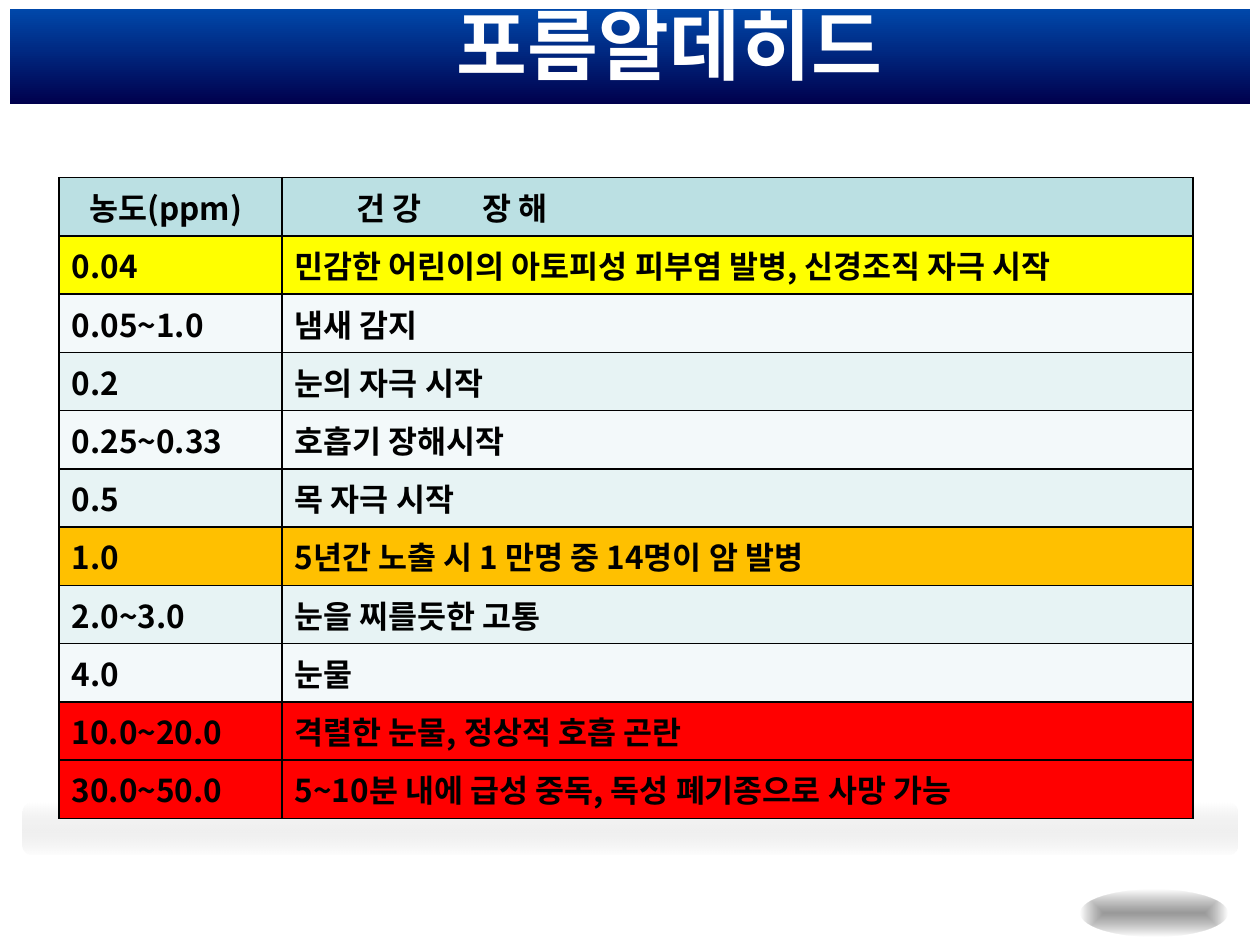
"""Build the formaldehyde slide: health effects by concentration."""
from lxml import etree
from pptx import Presentation
from pptx.dml import color
from pptx.enum import shapes, text
from pptx.oxml import ns
from pptx.util import Inches, Pt

FACE = "Noto Sans CJK KR"
rgb = color.RGBColor.from_string


def style(para, size, tint):
    """Format all the text of one paragraph."""
    font = para.font
    font.size, font.bold, font.name = Pt(size), True, FACE
    font.color.rgb = rgb(tint)
    base = para._p.pPr.find(ns.qn("a:defRPr"))
    etree.SubElement(base, ns.qn("a:ea")).set("typeface", FACE)


prs = Presentation()
prs.slide_width, prs.slide_height = Inches(10), Inches(7.5)
slide = prs.slides.add_slide(prs.slide_layouts[5])

kind = shapes.MSO_SHAPE
decor = [
    (kind.RECTANGLE, (0.08, 0.07, 9.84, 0.76), [("0048AA", 100), ("00004D", 100)]),
    (kind.ROUNDED_RECTANGLE, (0.18, 6.37, 9.64, 0.41), [("FFFFFF", 80), ("B6B6B6", 0)]),
    (kind.OVAL, (8.58, 7.06, 1.16, 0.37), [("808080", 80), ("5C5C5C", 0)]),
]
for form, box, stops in decor:
    shape = slide.shapes.add_shape(form, *map(Inches, box))
    shape.shadow.inherit = False
    shape.line.fill.background()
    shape.fill.gradient()
    shape.fill.gradient_angle = 270
    grad = shape._element.spPr.find(ns.qn("a:gradFill"))
    for stop, place, (tint, alpha) in zip(shape.fill.gradient_stops, (0, 1), stops):
        stop.position = place
        stop.color.rgb = rgb(tint)
        if alpha < 100:
            node = grad.findall(".//" + ns.qn("a:srgbClr"))[place]
            etree.SubElement(node, ns.qn("a:alpha")).set("val", str(alpha * 1000))
    if form == kind.ROUNDED_RECTANGLE:
        shape.adjustments[0] = 0.18
    if form == kind.OVAL:
        grad.remove(grad.find(ns.qn("a:lin")))
        focus = etree.SubElement(grad, ns.qn("a:path"))
        focus.set("path", "shape")
        rect = etree.SubElement(focus, ns.qn("a:fillToRect"))
        for side in "ltrb":
            rect.set(side, "50000")

rows = [
    ("농도(ppm)", "건 강\t장 해", "BBE0E3"),
    ("0.04", "민감한 어린이의 아토피성 피부염 발병, 신경조직 자극 시작", "FFFF00"),
    ("0.05~1.0", "냄새 감지", "F3F9FA"),
    ("0.2", "눈의 자극 시작", "E7F3F4"),
    ("0.25~0.33", "호흡기 장해시작", "F3F9FA"),
    ("0.5", "목 자극 시작", "E7F3F4"),
    ("1.0", "5년간 노출 시 1 만명 중 14명이 암 발병", "FFC000"),
    ("2.0~3.0", "눈을 찌를듯한 고통", "E7F3F4"),
    ("4.0", "눈물", "F3F9FA"),
    ("10.0~20.0", "격렬한 눈물, 정상적 호흡 곤란", "FF0000"),
    ("30.0~50.0", "5~10분 내에 급성 중독, 독성 폐기종으로 사망 가능", "FF0000"),
]
high = Inches(0.46)
table = slide.shapes.add_table(
    len(rows), 2, Inches(0.47), Inches(1.41), Inches(9), high * len(rows)).table
table.columns[0].width, table.columns[1].width = Inches(1.77), Inches(7.23)
for r, (dose, harm, tint) in enumerate(rows):
    table.rows[r].height = high
    for c, words in enumerate((dose, harm)):
        cell = table.cell(r, c)
        cell.text = words
        cell.vertical_anchor = text.MSO_ANCHOR.MIDDLE
        para = cell.text_frame.paragraphs[0]
        if r == 0:
            props = para._p.get_or_add_pPr()
            props.set("marL", str(Inches((0.14, 0.49)[c])))
            props.set("indent", "0")
            if c == 1:
                tabs = etree.SubElement(props, ns.qn("a:tabLst"))
                tab = etree.SubElement(tabs, ns.qn("a:tab"))
                tab.set("pos", str(Inches(1.5)))
                tab.set("algn", "l")
        style(para, 18, "000000")
        props = cell._tc.get_or_add_tcPr()
        for side in "LRTB":
            line = etree.SubElement(props, ns.qn("a:ln" + side))
            line.set("w", str(Pt(1)))
            fill = etree.SubElement(line, ns.qn("a:solidFill"))
            etree.SubElement(fill, ns.qn("a:srgbClr")).set("val", "000000")
        cell.fill.solid()
        cell.fill.fore_color.rgb = rgb(tint)

title = slide.shapes.title
title.left, title.top, title.width, title.height = map(Inches, (2.11, 0, 6.41, 0.7))
frame = title.text_frame
frame.text = "포름알데히드"
frame.auto_size = text.MSO_AUTO_SIZE.NONE
frame.vertical_anchor = text.MSO_ANCHOR.MIDDLE
frame.paragraphs[0].alignment = text.PP_ALIGN.CENTER
style(frame.paragraphs[0], 44, "FFFFFF")
title._element.getparent().append(title._element)

prs.save("out.pptx")
